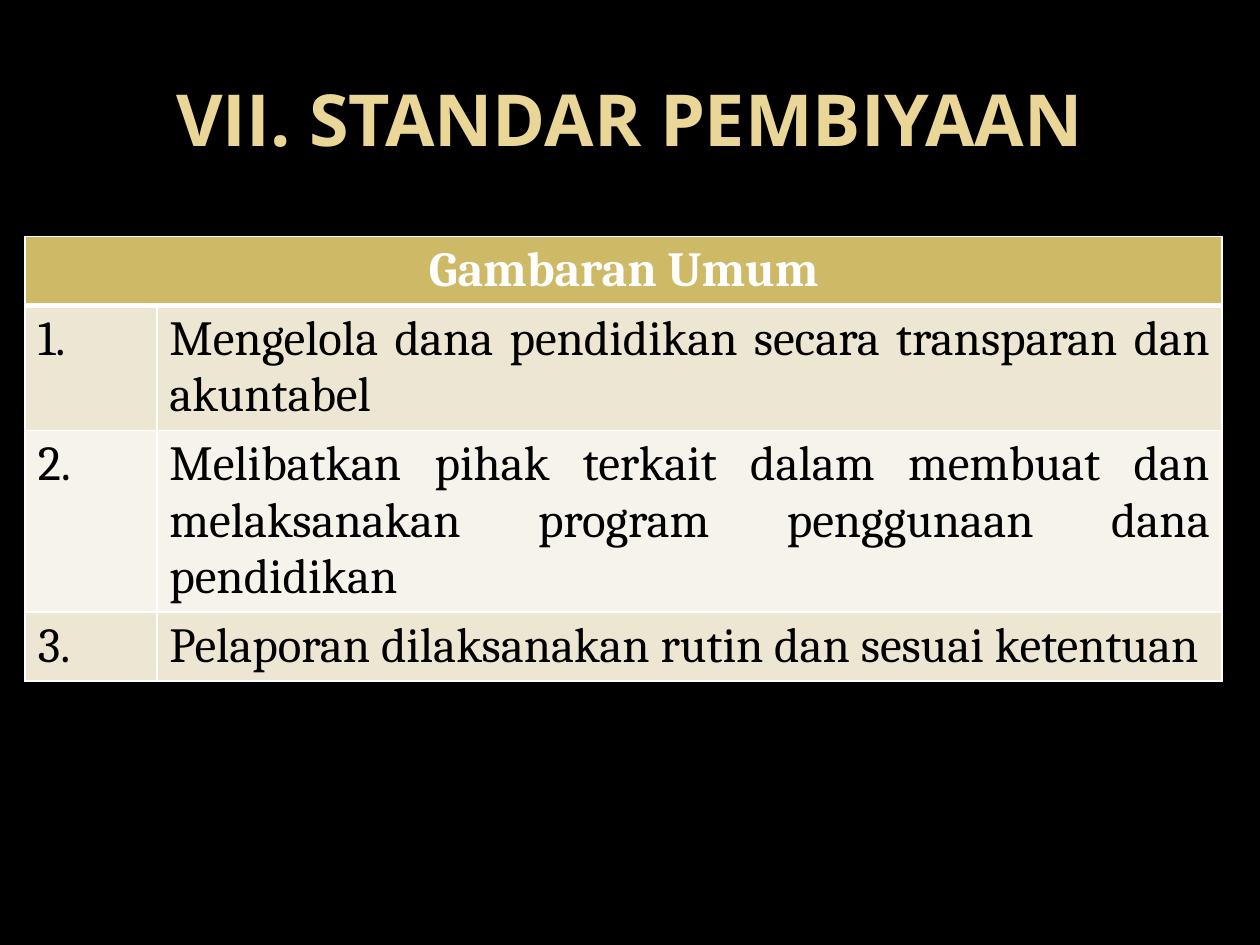
from lxml.etree import SubElement
from pptx import Presentation
from pptx.dml.color import RGBColor
from pptx.enum.text import MSO_ANCHOR, PP_ALIGN
from pptx.oxml.ns import qn
from pptx.util import Inches, Pt

POINTS = [
    ("1.", "Mengelola dana pendidikan secara transparan dan akuntabel", PP_ALIGN.JUSTIFY),
    ("2.", "Melibatkan pihak terkait dalam membuat dan melaksanakan program "
           "penggunaan dana pendidikan", PP_ALIGN.JUSTIFY),
    ("3.", "Pelaporan dilaksanakan rutin dan sesuai ketentuan", PP_ALIGN.LEFT),
]


def color(value):
    return RGBColor.from_string(value)


class Deck:
    GOLD, HEADER, RULE = "EAD696", "CEB966", "FFFFFF"
    BANDS = ("EDE6D3", "F6F3EA")
    TITLE_FONT, TABLE_FONT = "Open Sans", "Cambria"

    def __init__(self, width, height):
        self.presentation = Presentation()
        self.presentation.slide_width = Inches(width)
        self.presentation.slide_height = Inches(height)

    def add_slide(self, background):
        self.slide = self.presentation.slides.add_slide(self.presentation.slide_layouts[5])
        self.slide.background.fill.solid()
        self.slide.background.fill.fore_color.rgb = color(background)

    def area(self, left, top, width, height):
        across, down = self.presentation.slide_width, self.presentation.slide_height
        return int(left * across), int(top * down), int(width * across), int(height * down)

    def set_text(self, frame, text, font, size, ink, bold, align):
        frame.text = text
        paragraph = frame.paragraphs[0]
        paragraph.alignment = align
        paragraph.font.name = font
        paragraph.font.size = Pt(size)
        paragraph.font.bold = bold
        paragraph.font.color.rgb = color(ink)

    def title(self, text, *shares):
        heading = self.slide.shapes.title
        heading.left, heading.top, heading.width, heading.height = self.area(*shares)
        heading.text_frame.vertical_anchor = MSO_ANCHOR.MIDDLE
        self.set_text(heading.text_frame, text, self.TITLE_FONT, 41, self.GOLD, True,
                      PP_ALIGN.CENTER)

    def borders(self, cell, top=1, bottom=1):
        properties = cell._tc.get_or_add_tcPr()
        for side, width in (("L", 1), ("R", 1), ("T", top), ("B", bottom)):
            line = SubElement(properties, qn(f"a:ln{side}"), w=str(int(Pt(width))))
            fill = SubElement(line, qn("a:solidFill"))
            SubElement(fill, qn("a:srgbClr"), val=self.RULE)

    def cell(self, cell, text, fill, ink="000000", bold=False, align=PP_ALIGN.LEFT, **edges):
        self.borders(cell, **edges)
        cell.fill.solid()
        cell.fill.fore_color.rgb = color(fill)
        self.set_text(cell.text_frame, text, self.TABLE_FONT, 28, ink, bold, align)

    def numbered_table(self, header, points, number_share, *shares):
        left, top, width, height = self.area(*shares)
        table = self.slide.shapes.add_table(len(points) + 1, 2, left, top, width, height).table
        table.columns[0].width = int(width * number_share)
        table.columns[1].width = width - table.columns[0].width
        table.cell(0, 0).merge(table.cell(0, 1))
        for heading in table.rows[0].cells:
            self.cell(heading, "" if heading.is_spanned else header, self.HEADER,
                      self.RULE, True, PP_ALIGN.CENTER, bottom=3)
        table.cell(0, 0).vertical_anchor = MSO_ANCHOR.MIDDLE
        for row, (number, text, align) in enumerate(points, 1):
            band = self.BANDS[(row - 1) % 2]
            top_edge = 3 if row == 1 else 1
            self.cell(table.cell(row, 0), number, band, top=top_edge)
            self.cell(table.cell(row, 1), text, band, align=align, top=top_edge)


def main():
    deck = Deck(10, 7.5)
    deck.add_slide("000000")
    deck.title("VII. STANDAR PEMBIYAAN", 0.05, 0.04, 0.9, 0.17)
    deck.numbered_table("Gambaran Umum", POINTS, 0.11, 0.02, 0.25, 0.95, 0.22)
    deck.presentation.save("out.pptx")


if __name__ == "__main__":
    main()
